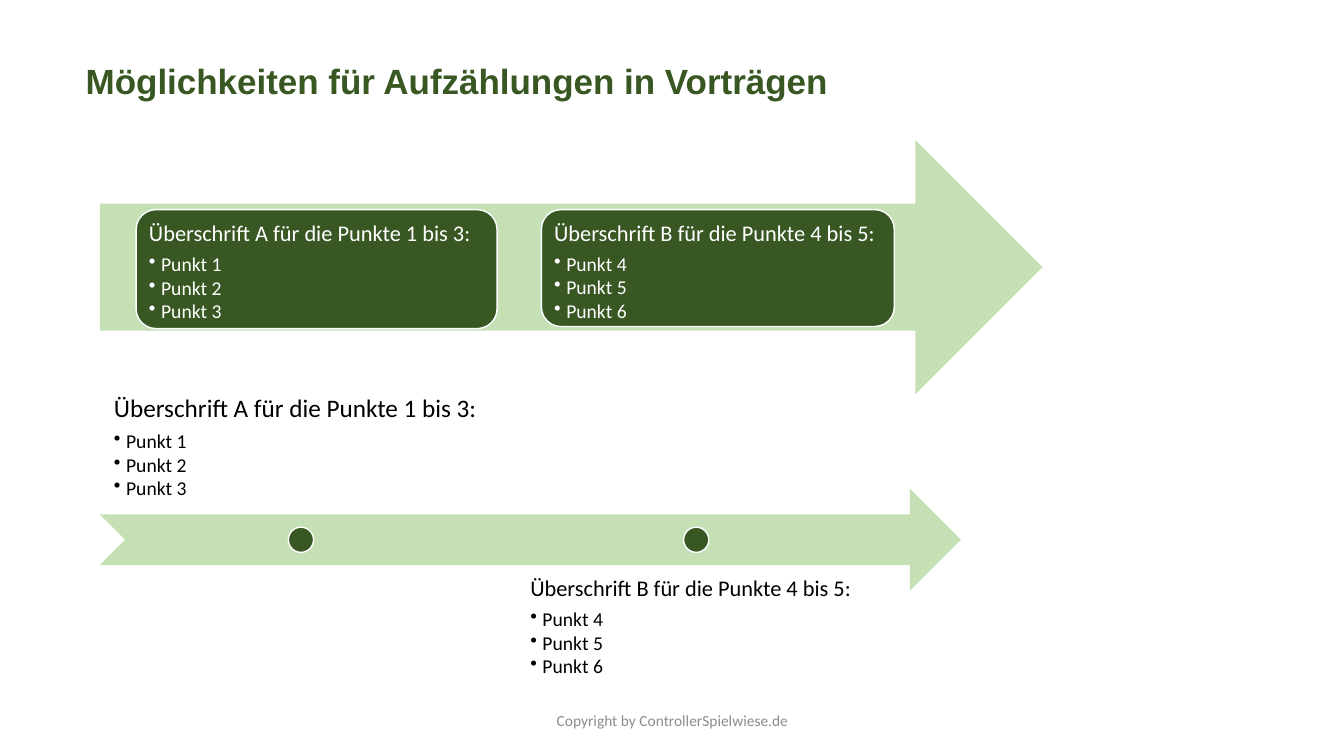
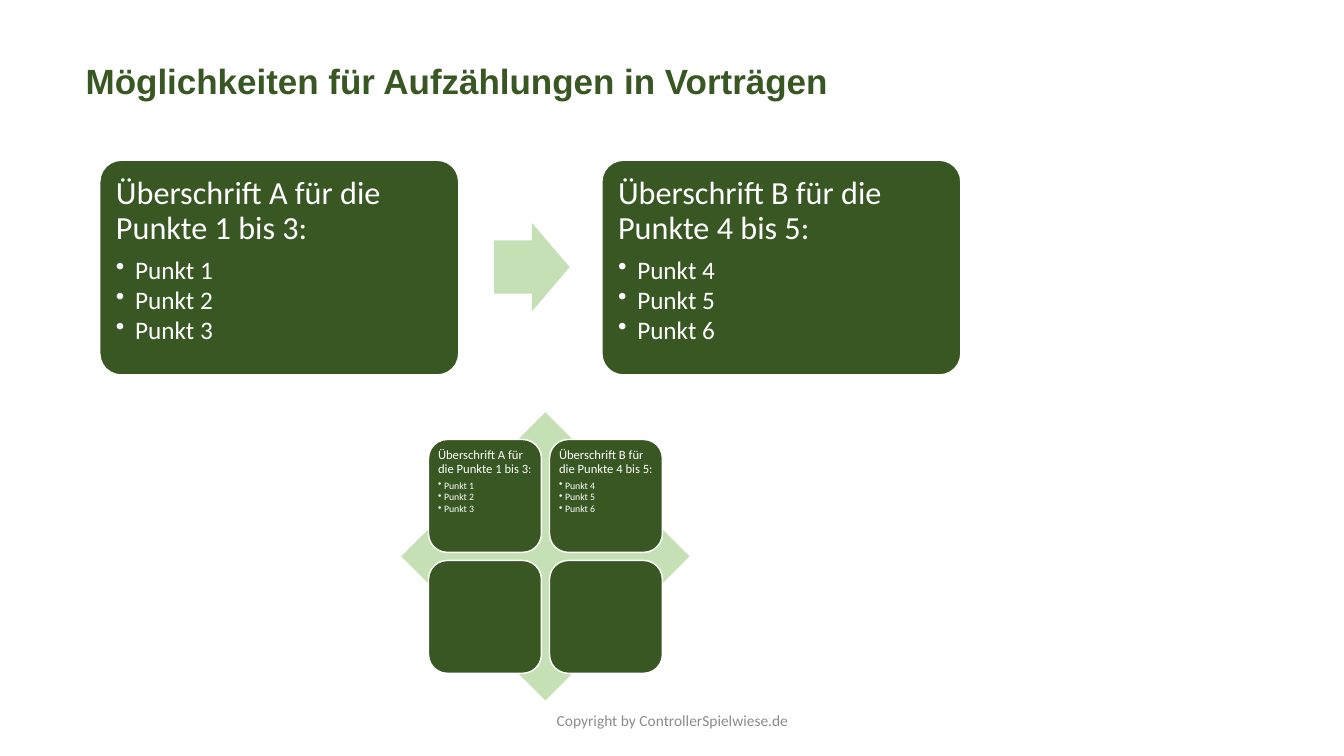
from lxml.etree import SubElement
from pptx import Presentation
from pptx.dml.color import RGBColor
from pptx.enum.shapes import MSO_SHAPE as SHAPE
from pptx.enum.text import MSO_ANCHOR as ANCHOR, PP_ALIGN as ALIGN
from pptx.oxml.ns import qn
from pptx.util import Inches, Pt

DARK, LIGHT, WHITE, BLACK, GREY = "385723", "C5E0B4", "FFFFFF", "000000", "8C8C8C"
TITLE = "Möglichkeiten für Aufzählungen in Vorträgen"
FOOTER = "Copyright by ControllerSpielwiese.de"
LIST_A = ["Überschrift A für die Punkte 1 bis 3:", "Punkt 1", "Punkt 2", "Punkt 3"]
LIST_B = ["Überschrift B für die Punkte 4 bis 5:", "Punkt 4", "Punkt 5", "Punkt 6"]


def rgb(color):
    return RGBColor.from_string(color)


def style(p, size, color, name="Calibri", bold=False):
    for r in p.runs:
        r.font.name, r.font.size, r.font.bold = name, Pt(size), bold
        r.font.color.rgb = rgb(color)


def add_bullet(p, indent):
    pPr = p._p.get_or_add_pPr()
    pPr.set("marL", str(Inches(indent)))
    pPr.set("indent", str(-Inches(indent)))
    SubElement(pPr, qn("a:buChar")).set("char", "•")


def fill_list(tf, lines, sizes, color, inset, indent, anchor=ANCHOR.TOP):
    """Write a heading followed by bullets; sizes holds both font sizes."""
    tf.word_wrap, tf.vertical_anchor = True, anchor
    tf.margin_left = tf.margin_right = tf.margin_top = tf.margin_bottom = Inches(inset)
    tf.text = "\n".join(lines)
    for i, p in enumerate(tf.paragraphs):
        size, gap = (sizes[1], 0.12) if i else (sizes[0], 0.35)
        if i:
            p.level = 1
            add_bullet(p, indent)
        p.alignment = ALIGN.LEFT
        p.line_spacing, p.space_after = 0.9, Pt(size * gap)
        style(p, size, color)


def add_shape(s, kind, box, fill=LIGHT, outlined=False, adj=()):
    sp = s.shapes.add_shape(kind, *map(Inches, box))
    sp.shadow.inherit = False
    sp.fill.solid()
    sp.fill.fore_color.rgb = rgb(fill)
    if outlined:
        sp.line.color.rgb, sp.line.width = rgb(WHITE), Pt(1)
    else:
        sp.line.fill.background()
    for i, value in enumerate(adj):
        sp.adjustments[i] = value
    return sp


def add_card(s, box, lines=None, sizes=None, inset=0, indent=0, adj=()):
    sp = add_shape(s, SHAPE.ROUNDED_RECTANGLE, box, DARK, True, adj)
    if lines:
        fill_list(sp.text_frame, lines, sizes, WHITE, inset, indent)


def add_text(s, box):
    tf = s.shapes.add_textbox(*map(Inches, box)).text_frame
    tf.word_wrap = True
    return tf


def add_slide(prs):
    """Add a slide with the shared title and footer."""
    s = prs.slides.add_slide(prs.slide_layouts[5])
    title = s.shapes.title
    title.left, title.top, title.width, title.height = map(Inches, (0.75, 0.54, 9.43, 0.52))
    tf = title.text_frame
    tf.text, tf.vertical_anchor = TITLE, ANCHOR.TOP
    tf.paragraphs[0].alignment = ALIGN.LEFT
    style(tf.paragraphs[0], 25, DARK, "Arial", True)

    tf = add_text(s, (4.42, 6.95, 4.5, 0.4))
    tf.text, tf.vertical_anchor = FOOTER, ANCHOR.MIDDLE
    tf.paragraphs[0].alignment = ALIGN.CENTER
    style(tf.paragraphs[0], 11, GREY)
    return s


def build_arrows(prs):
    s = add_slide(prs)
    add_shape(s, SHAPE.RIGHT_ARROW, (0.99, 1.39, 9.35, 2.52))
    add_card(s, (1.35, 2.08, 3.58, 1.18), LIST_A, (16, 14), 0.07, 0.12)
    add_card(s, (5.37, 2.08, 3.5, 1.16), LIST_B, (16, 14), 0.07, 0.12)

    add_shape(s, SHAPE.NOTCHED_RIGHT_ARROW, (0.99, 4.85, 8.54, 1.01))
    for x in (2.86, 6.78):
        add_shape(s, SHAPE.OVAL, (x, 5.23, 0.25, 0.25), DARK, True)
    fill_list(add_text(s, (0.99, 4.09, 3.98, 1.01)), LIST_A, (18, 14), BLACK,
              0.14, 0.12, ANCHOR.BOTTOM)
    fill_list(add_text(s, (5.14, 5.61, 3.53, 1.01)), LIST_B, (16, 14), BLACK, 0.12, 0.12)


def build_cards(prs):
    s = add_slide(prs)
    for x, lines in ((0.99, LIST_A), (5.97, LIST_B)):
        add_card(s, (x, 1.59, 3.56, 2.13), lines, (23, 18), 0.1, 0.19, (0.1,))
    add_shape(s, SHAPE.RIGHT_ARROW, (4.9, 2.21, 0.75, 0.88), adj=(0.6, 0.5))

    add_shape(s, SHAPE.DIAMOND, (3.98, 4.09, 2.86, 2.86))
    side, pitch = 1.12, 1.2
    for i, lines in enumerate((LIST_A, LIST_B, None, None)):
        row, col = divmod(i, 2)
        box = (4.25 + col * pitch, 4.36 + row * pitch, side, side)
        add_card(s, box, lines, (9, 7), 0.04, 0.06)


def main():
    prs = Presentation()
    prs.slide_width, prs.slide_height = Inches(13.33), Inches(7.5)
    build_arrows(prs)
    build_cards(prs)
    prs.save("out.pptx")


if __name__ == "__main__":
    main()
